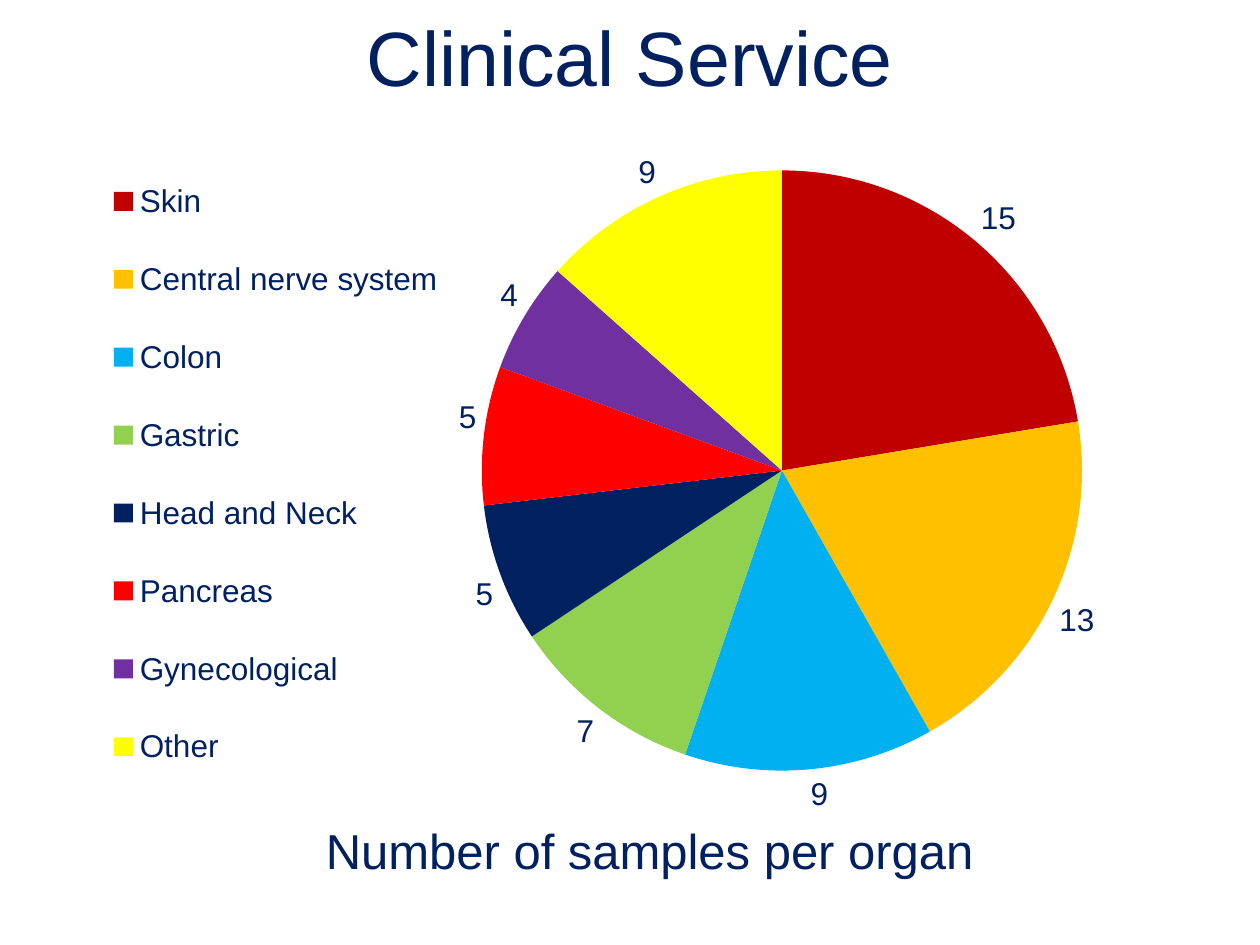
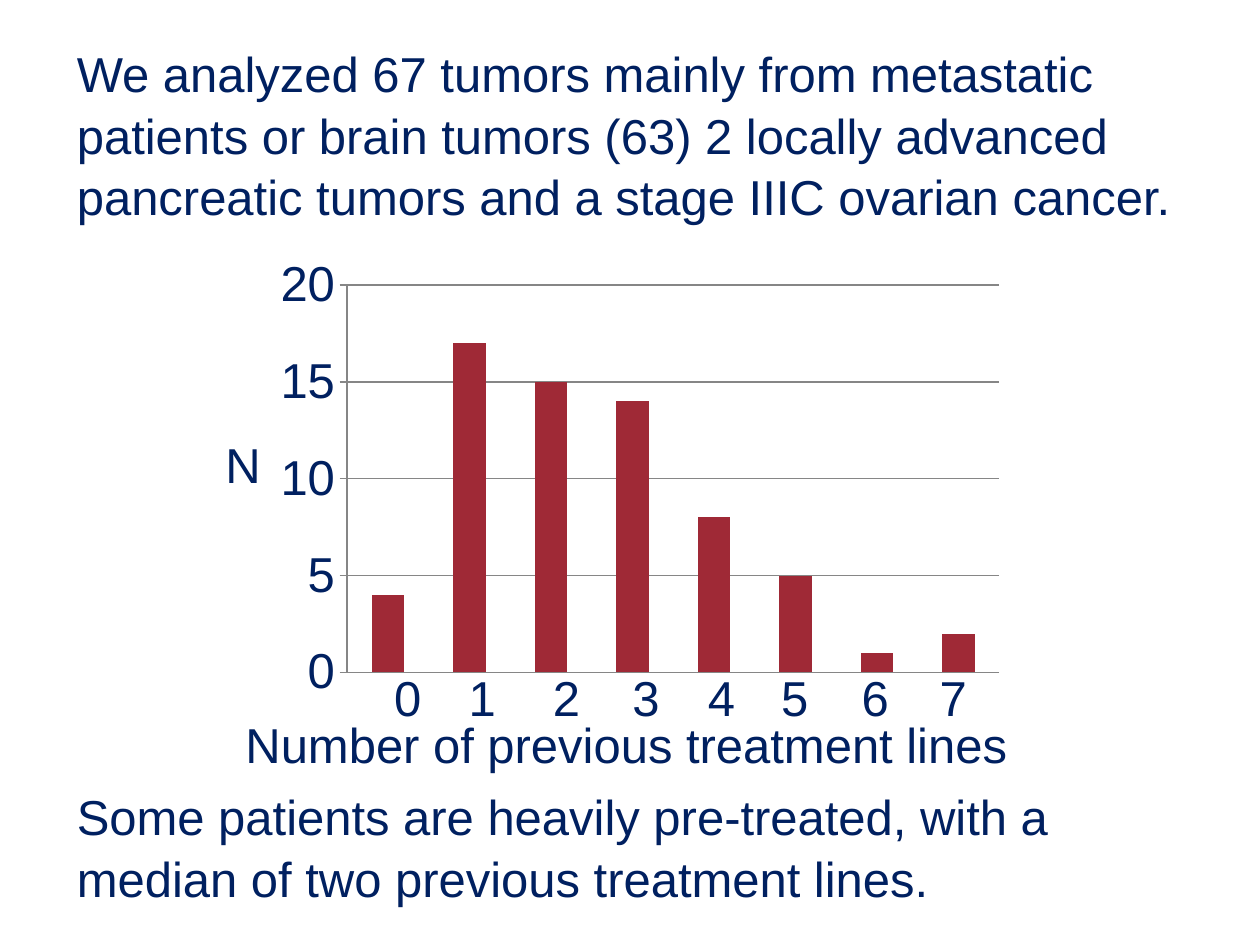
from pptx import Presentation
from pptx.chart.data import CategoryChartData
from pptx.dml.color import RGBColor
from pptx.enum.chart import (XL_CHART_TYPE, XL_LABEL_POSITION,
                             XL_LEGEND_POSITION, XL_TICK_LABEL_POSITION,
                             XL_TICK_MARK)
from pptx.enum.text import MSO_ANCHOR, MSO_AUTO_SIZE, PP_ALIGN
from pptx.oxml import parse_xml
from pptx.oxml.ns import nsdecls, qn
from pptx.util import Inches, Pt

PIE, COLUMN = XL_CHART_TYPE.PIE, XL_CHART_TYPE.COLUMN_CLUSTERED
OUTSIDE_END = XL_LABEL_POSITION.OUTSIDE_END
LEGEND_LEFT = XL_LEGEND_POSITION.LEFT
TICK_OUT, TICK_NONE = XL_TICK_MARK.OUTSIDE, XL_TICK_MARK.NONE
LABELS_LOW = XL_TICK_LABEL_POSITION.LOW
LEFT, CENTER = PP_ALIGN.LEFT, PP_ALIGN.CENTER
TOP, MIDDLE = MSO_ANCHOR.TOP, MSO_ANCHOR.MIDDLE
NO_FIT = MSO_AUTO_SIZE.NONE

FONT = "Arial"
TITLE_SIZE, TEXT_SIZE, CHART_SIZE = 44, 28, 18
COLORS = {"navy": "002060", "bar": "9F2936", "grid": "868686"}

ORGANS = [
    ("Skin", 15, "C00000"),
    ("Central nerve system", 13, "FFC000"),
    ("Colon", 9, "00B0F0"),
    ("Gastric", 7, "92D050"),
    ("Head and Neck", 5, "002060"),
    ("Pancreas", 5, "FF0000"),
    ("Gynecological", 4, "7030A0"),
    ("Other", 9, "FFFF00"),
]
PATIENTS_PER_LINE_COUNT = [4, 17, 15, 14, 8, 5, 1, 2]
LINE_COUNT_LEFTS = [0.93, 1.52, 2.19, 2.82, 3.42, 4.0, 4.64, 5.26]
FINDINGS = [
    "We analyzed 67 tumors mainly from metastatic patients or brain tumors "
    "(63) 2 locally advanced pancreatic tumors and a stage IIIC ovarian "
    "cancer.",
    "Some patients are heavily pre-treated, with a median of two previous "
    "treatment lines.",
]


def rgb(name):
    return RGBColor.from_string(COLORS[name])


def style_font(font, size):
    font.name = FONT
    font.size = Pt(size)
    font.color.rgb = rgb("navy")


def style_text(frame, size, align=LEFT, anchor=TOP):
    frame.word_wrap = True
    frame.auto_size = NO_FIT
    frame.vertical_anchor = anchor
    for para in frame.paragraphs:
        para.alignment = align
        for span in para.runs:
            style_font(span.font, size)


def place(shape, box):
    shape.left, shape.top, shape.width, shape.height = map(Inches, box)


def add_label(page, text, box, align=LEFT):
    label = page.shapes.add_textbox(*map(Inches, box))
    label.text_frame.text = text
    style_text(label.text_frame, TEXT_SIZE, align)


def add_title(page, text, box):
    title = page.shapes.title
    place(title, box)
    title.text_frame.text = text
    style_text(title.text_frame, TITLE_SIZE, CENTER, MIDDLE)


def set_layout(element, index, fractions, inner=False):
    """Fix a chart part at x, y, w, h fractions of the chart's box."""
    for old in element.findall(qn("c:layout")):
        element.remove(old)
    target = '<c:layoutTarget val="inner"/>' if inner else ""
    modes = "".join(f'<c:{axis}Mode val="edge"/>' for axis in "xy")
    values = "".join(f'<c:{key} val="{value}"/>'
                     for key, value in zip("xywh", fractions))
    element.insert(index, parse_xml(
        f'<c:layout {nsdecls("c")}><c:manualLayout>{target}{modes}{values}'
        '</c:manualLayout></c:layout>'))


def add_chart(page, kind, categories, values, box, plot_fractions):
    data = CategoryChartData()
    data.categories = categories
    data.add_series("Series 1", values)
    chart = page.shapes.add_chart(kind, *map(Inches, box), data).chart
    chart.has_title = False
    chart.has_legend = False
    style_font(chart.font, CHART_SIZE)
    plot_area = chart.element.find(".//" + qn("c:plotArea"))
    set_layout(plot_area, 0, plot_fractions, inner=True)
    return chart


def add_organ_pie(page, box):
    names, counts, colors = zip(*ORGANS)
    chart = add_chart(page, PIE, names, counts, box, (0.37, 0.09, 0.56, 0.82))
    plot = chart.plots[0]
    plot.vary_by_categories = True
    for index, color in enumerate(colors):
        fill = plot.series[0].points[index].format.fill
        fill.solid()
        fill.fore_color.rgb = RGBColor.from_string(color)
    plot.has_data_labels = True
    labels = plot.data_labels
    labels.show_value = True
    labels.show_percentage = False
    labels.position = OUTSIDE_END
    style_font(labels.font, CHART_SIZE)

    chart.has_legend = True
    legend = chart.legend
    legend.position = LEGEND_LEFT
    legend.include_in_layout = False
    style_font(legend.font, CHART_SIZE)
    set_layout(chart.element.find(".//" + qn("c:legend")), 1,
               (0.02, 0.05, 0.33, 0.91))


def add_treatment_columns(page, box):
    """Column chart with its axis captions set around the given box."""
    left, top, width, height = box
    counts = PATIENTS_PER_LINE_COUNT
    chart = add_chart(page, COLUMN, [str(n + 1) for n in range(len(counts))],
                      counts, box, (0.11, 0.08, 0.87, 0.84))
    plot = chart.plots[0]
    plot.gap_width = 150
    plot.vary_by_categories = False
    fill = plot.series[0].format.fill
    fill.solid()
    fill.fore_color.rgb = rgb("bar")

    chart.category_axis.visible = False
    axis = chart.value_axis
    axis.minimum_scale, axis.maximum_scale, axis.major_unit = 0, 20, 5
    axis.major_tick_mark, axis.minor_tick_mark = TICK_OUT, TICK_NONE
    axis.tick_label_position = LABELS_LOW
    style_font(axis.tick_labels.font, TEXT_SIZE)
    axis.has_major_gridlines = True
    for line in (axis.format.line, axis.major_gridlines.format.line):
        line.color.rgb = rgb("grid")
        line.width = Pt(0.75)

    for number, offset in enumerate(LINE_COUNT_LEFTS):
        add_label(page, str(number),
                  (left + offset, top + height - 0.38, 0.39, 0.57))
    add_label(page, "Number of previous treatment lines",
              (left - 0.25, top + height - 0.01, width + 0.58, 0.57))
    add_label(page, "N", (left - 0.41, top + 1.43, 0.49, 0.57))


def add_findings(page, box, chart_gap):
    """Two unbulleted paragraphs, chart_gap inches apart."""
    body = page.placeholders[1]
    place(body, box)
    frame = body.text_frame
    frame.text = "\n".join(FINDINGS)
    style_text(frame, TEXT_SIZE)
    for para, gap in zip(frame.paragraphs, (0, chart_gap)):
        para.space_before = Inches(gap)
        para.line_spacing = 1.04
        properties = para._p.get_or_add_pPr()
        properties.set("marL", "0")
        properties.set("indent", "0")
        properties.append(parse_xml(f'<a:buNone {nsdecls("a")}/>'))


def build_organ_slide(deck):
    page = deck.slides.add_slide(deck.slide_layouts[5])
    add_title(page, "Clinical Service", (0.5, -0.18, 9, 1.25))
    add_organ_pie(page, (0.59, 0.83, 8.64, 5.81))
    add_label(page, "Number of samples per organ", (0.43, 6.46, 9.45, 0.48),
              CENTER)


def build_treatment_slide(deck):
    page = deck.slides.add_slide(deck.slide_layouts[1])
    title = page.shapes.title.element
    title.getparent().remove(title)
    add_findings(page, (0.51, 0.28, 9, 4.95), 4.44)
    add_treatment_columns(page, (2.1, 1.97, 5.95, 3.66))


def main():
    deck = Presentation()
    deck.slide_width, deck.slide_height = Inches(10), Inches(7.5)
    build_organ_slide(deck)
    build_treatment_slide(deck)
    deck.save("out.pptx")


if __name__ == "__main__":
    main()
